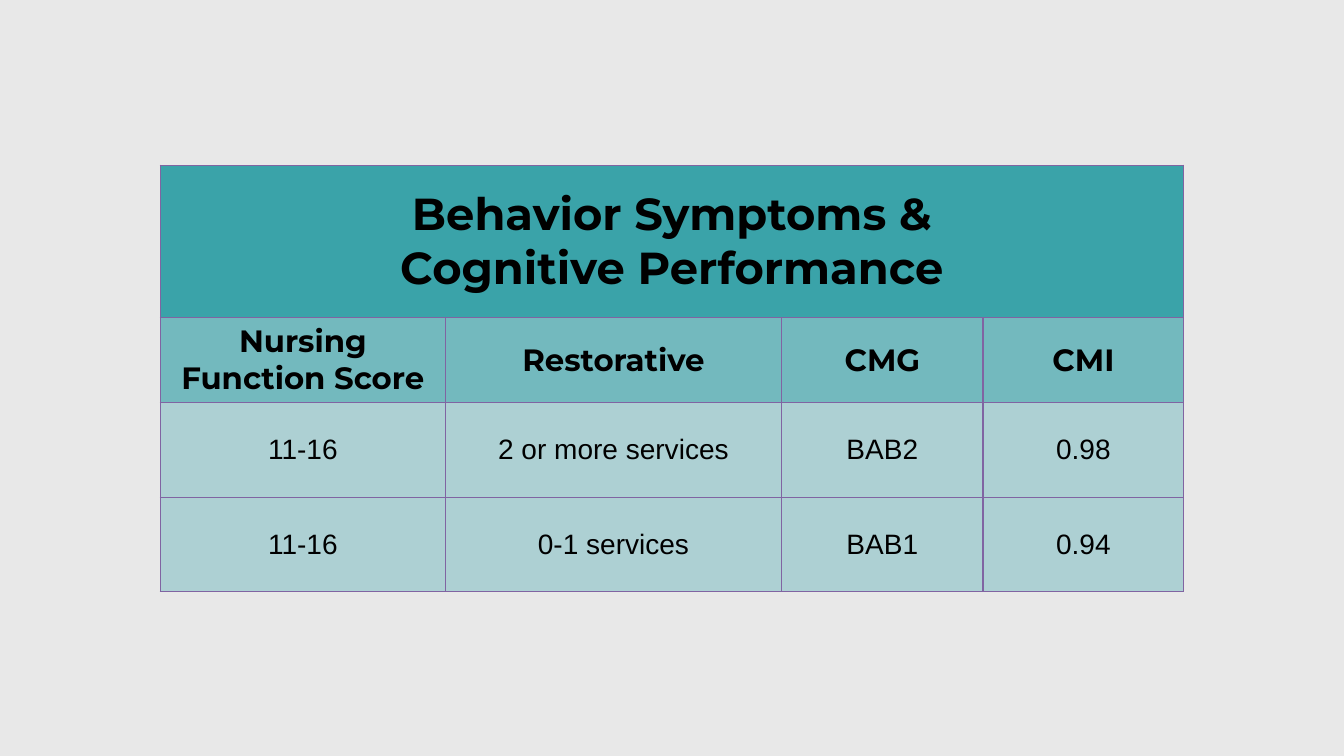
from dataclasses import dataclass

from lxml.etree import SubElement
from pptx import Presentation
from pptx.dml.color import RGBColor
from pptx.enum.text import MSO_ANCHOR, PP_ALIGN
from pptx.oxml.ns import qn
from pptx.util import Inches, Pt


@dataclass(frozen=True)
class RowStyle:
    font: str
    size: int
    bold: bool
    opacity: int


@dataclass(frozen=True)
class Theme:
    background: str = "D9D9D9"
    background_opacity: int = 60
    teal: str = "008C95"
    border: str = "8064A2"
    border_width: int = 1
    text: str = "000000"
    title: RowStyle = RowStyle("Montserrat", 32, True, 75)
    header: RowStyle = RowStyle("Montserrat", 22, True, 50)
    body: RowStyle = RowStyle("Arial", 20, False, 25)


THEME = Theme()
SLIDE_WIDTH = Inches(13.33)
SLIDE_HEIGHT = Inches(7.5)
TABLE_TOP = 21.87
COLUMN_SHARES = (21.23, 25, 15, 14.93)
ROWS = (
    (20.13, THEME.title, ("Behavior Symptoms &\nCognitive Performance", "", "", "")),
    (11.2, THEME.header, ("Nursing\nFunction Score", "Restorative", "CMG", "CMI")),
    (12.53, THEME.body, ("11-16", "2 or more services", "BAB2", "0.98")),
    (12.53, THEME.body, ("11-16", "0-1 services", "BAB1", "0.94")),
)


def across(share):
    return round(SLIDE_WIDTH * share / 100)


def down(share):
    return round(SLIDE_HEIGHT * share / 100)


def fill_with(fill, parent, color, opacity):
    fill.solid()
    fill.fore_color.rgb = RGBColor.from_string(color)
    tint = parent.find(f"{qn('a:solidFill')}/{qn('a:srgbClr')}")
    SubElement(tint, qn("a:alpha"), val=str(opacity * 1000))


def draw_borders(properties):
    for side in ("L", "R", "T", "B"):
        line = SubElement(properties, qn(f"a:ln{side}"), w=str(Pt(THEME.border_width)))
        paint = SubElement(line, qn("a:solidFill"))
        SubElement(paint, qn("a:srgbClr"), val=THEME.border)


def style_cell(cell, text, style):
    cell.vertical_anchor = MSO_ANCHOR.MIDDLE
    properties = cell._tc.get_or_add_tcPr()
    draw_borders(properties)
    fill_with(cell.fill, properties, THEME.teal, style.opacity)
    cell.text_frame.text = text
    for para in cell.text_frame.paragraphs:
        para.alignment = PP_ALIGN.CENTER
        para.font.name = style.font
        para.font.size = Pt(style.size)
        para.font.bold = style.bold
        para.font.color.rgb = RGBColor.from_string(THEME.text)


def add_score_table(page):
    width = across(sum(COLUMN_SHARES))
    height = down(sum(share for share, _, _ in ROWS))
    left = (SLIDE_WIDTH - width) // 2
    frame = page.shapes.add_table(
        len(ROWS), len(COLUMN_SHARES), left, down(TABLE_TOP), width, height
    )
    table = frame.table
    for column, share in zip(table.columns, COLUMN_SHARES):
        column.width = across(share)
    for row, (share, style, texts) in zip(table.rows, ROWS):
        row.height = down(share)
        for cell, text in zip(row.cells, texts):
            style_cell(cell, text, style)
    table.cell(0, 0).merge(table.cell(0, len(COLUMN_SHARES) - 1))


def paint_background(page):
    fill = page.background.fill
    fill.solid()
    properties = page._element.find(f".//{qn('p:bgPr')}")
    fill_with(fill, properties, THEME.background, THEME.background_opacity)


def main():
    deck = Presentation()
    deck.slide_width = SLIDE_WIDTH
    deck.slide_height = SLIDE_HEIGHT
    page = deck.slides.add_slide(deck.slide_layouts[6])
    paint_background(page)
    add_score_table(page)
    deck.save("out.pptx")


if __name__ == "__main__":
    main()
